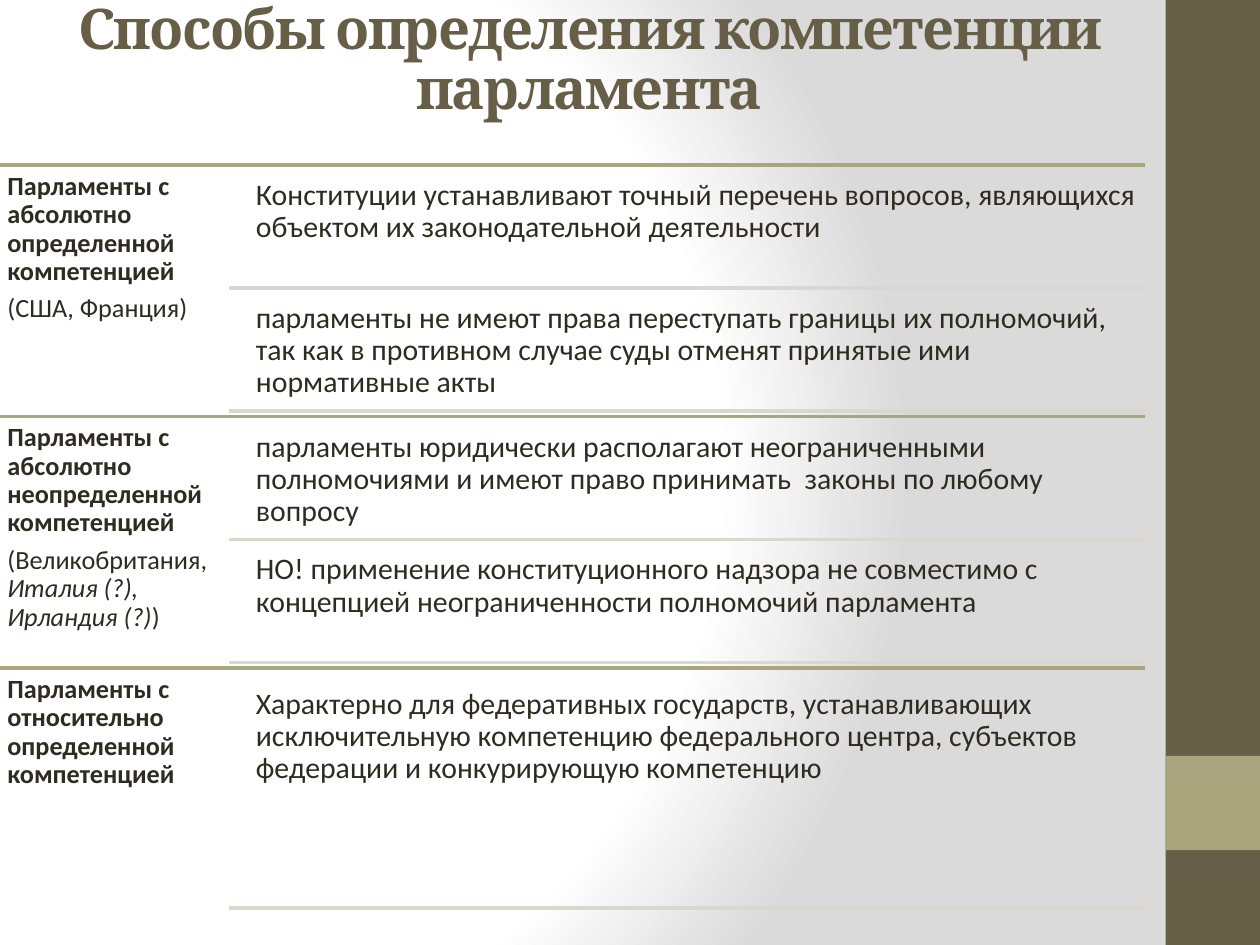
from dataclasses import dataclass

from pptx import Presentation
from pptx.dml.color import RGBColor as Rgb
from pptx.enum.shapes import MSO_CONNECTOR as Connector, MSO_SHAPE as Shape
from pptx.enum.text import MSO_ANCHOR as Anchor, PP_ALIGN as Align
from pptx.oxml import parse_xml
from pptx.oxml.ns import nsdecls
from pptx.util import Cm, Pt


@dataclass(frozen=True)
class Theme:
    ink: str = "2F2B20"
    brown: str = "675E47"
    olive: str = "A9A57C"
    pale: str = "DAD8CC"
    paper: str = "FFFFFF"
    grey: str = "DADADA"
    heading_font: str = "Cambria"
    body_font: str = "Calibri"
    title_size: int = 32
    label_size: int = 15
    body_size: int = 17
    rule_width: int = 2


BOLD, PLAIN, ITALIC = {"bold": True}, {"bold": False}, {"italic": True}

# Each group: label paragraphs (lists of styled runs) and its statements
GROUPS = [
    ([[("Парламенты с абсолютно определенной компетенцией", BOLD)],
      [("(США, Франция)", PLAIN)]],
     ["Конституции устанавливают точный перечень вопросов, являющихся "
      "объектом их законодательной деятельности",
      "парламенты не имеют права переступать границы их полномочий, так как "
      "в противном случае суды отменят принятые ими нормативные акты"]),
    ([[("Парламенты с абсолютно неопределенной компетенцией", BOLD)],
      [("(Великобритания, ", PLAIN), ("Италия (?), Ирландия (?)", ITALIC),
       (")", PLAIN)]],
     ["парламенты юридически располагают неограниченными полномочиями и "
      "имеют право принимать  законы по любому вопросу",
      "НО! применение конституционного надзора не совместимо с концепцией "
      "неограниченности полномочий парламента"]),
    ([[("Парламенты с относительно определенной компетенцией", BOLD)]],
     ["Характерно для федеративных государств, устанавливающих "
      "исключительную компетенцию федерального центра, субъектов федерации "
      "и конкурирующую компетенцию"]),
]

# Layout in centimetres
GROUPS_TOP, GROUP_HEIGHT = 3.33, 5.07
LABEL_WIDTH, RULE_END = 4.62, 23.09
STATEMENT_LEFT, STATEMENT_WIDTH = 4.98, 18.13
CELL_TO_GAP = 20  # a statement is this many times as high as the gap above it


def apply(target, values):
    for name, value in values.items():
        setattr(target, name, value)


class SlideBuilder:
    def __init__(self, slide, theme):
        self.slide, self.theme = slide, theme

    def background(self):
        stops = "".join(
            f'<a:gs pos="{position}"><a:srgbClr val="{colour}"/></a:gs>'
            for position, colour in ((0, self.theme.paper),
                                     (75000, self.theme.paper),
                                     (100000, self.theme.grey)))
        self.slide.element.cSld.insert(0, parse_xml(
            f'<p:bg {nsdecls("p", "a")}><p:bgPr><a:gradFill rotWithShape="1">'
            f'<a:gsLst>{stops}</a:gsLst><a:path path="circle">'
            '<a:fillToRect l="20000" t="50000" r="100000" b="50000"/></a:path>'
            '</a:gradFill><a:effectLst/></p:bgPr></p:bg>'))

    def bar(self, left, top, width, height, colour):
        bar = self.slide.shapes.add_shape(
            Shape.RECTANGLE, Cm(left), Cm(top), Cm(width), Cm(height))
        bar.shadow.inherit = False
        bar.fill.solid()
        bar.fill.fore_color.rgb = Rgb.from_string(colour)
        bar.line.fill.background()

    def rule(self, left, y, colour):
        rule = self.slide.shapes.add_connector(
            Connector.STRAIGHT, Cm(left), Cm(y), Cm(RULE_END), Cm(y))
        rule.line.width = Pt(self.theme.rule_width)
        rule.line.color.rgb = Rgb.from_string(colour)
        rule._element.spPr.append(parse_xml(f'<a:effectLst {nsdecls("a")}/>'))

    def run(self, paragraph, text, font, size, colour, style):
        run = paragraph.add_run()
        run.text = text
        apply(run.font, {"name": font, "size": Pt(size), **style})
        run.font.color.rgb = Rgb.from_string(colour)
        return run

    def title(self, text):
        title = self.slide.shapes.title
        apply(title, {"left": Cm(1.3), "top": Cm(0),
                      "width": Cm(21.16), "height": Cm(2.49)})
        title.text_frame.vertical_anchor = Anchor.MIDDLE
        heading = title.text_frame.paragraphs[0]
        apply(heading, {"alignment": Align.CENTER, "line_spacing": 0.88})
        run = self.run(heading, text, self.theme.heading_font,
                       self.theme.title_size, self.theme.brown, BOLD)
        run.font._element.set("spc", "-100")

    def text(self, left, top, width, height, paragraphs, size, inset):
        frame = self.slide.shapes.add_textbox(
            Cm(left), Cm(top), Cm(width), Cm(height)).text_frame
        sides = ("left", "top", "right", "bottom")
        apply(frame, {"word_wrap": True, "vertical_anchor": Anchor.TOP,
                      **{f"margin_{side}": Cm(inset) for side in sides}})
        for index, runs in enumerate(paragraphs):
            paragraph = frame.add_paragraph() if index else frame.paragraphs[0]
            apply(paragraph, {"line_spacing": 0.9,
                              "space_after": Pt(0.35 * size)})
            for text, style in runs:
                self.run(paragraph, text, self.theme.body_font, size,
                         self.theme.ink, style)

    def group(self, top, label, statements):
        theme = self.theme
        self.rule(0, top, theme.olive)
        self.text(0, top, LABEL_WIDTH, GROUP_HEIGHT, label,
                  theme.label_size, 0.15)
        # Gaps surround the statements above, between and below
        count = len(statements)
        gap = GROUP_HEIGHT / (count * CELL_TO_GAP + count + 1)
        height = gap * CELL_TO_GAP
        for index, statement in enumerate(statements):
            cell_top = top + gap + index * (height + gap)
            self.text(STATEMENT_LEFT, cell_top, STATEMENT_WIDTH, height,
                      [[(statement, {})]], theme.body_size, 0.18)
            self.rule(LABEL_WIDTH, cell_top + height, theme.pale)


def main():
    deck = Presentation()
    apply(deck, {"slide_width": Cm(25.4), "slide_height": Cm(19.05)})
    theme = Theme()
    title_only = deck.slide_layouts[5]
    builder = SlideBuilder(deck.slides.add_slide(title_only), theme)

    # Backdrop and side bars
    builder.background()
    builder.bar(23.5, 0, 1.9, 19.05, theme.brown)
    builder.bar(23.5, 15.24, 1.9, 1.9, theme.olive)

    # Title and groups
    builder.title("Способы определения компетенции парламента")
    for index, (label, statements) in enumerate(GROUPS):
        builder.group(GROUPS_TOP + index * GROUP_HEIGHT, label, statements)

    deck.save("out.pptx")


if __name__ == "__main__":
    main()
